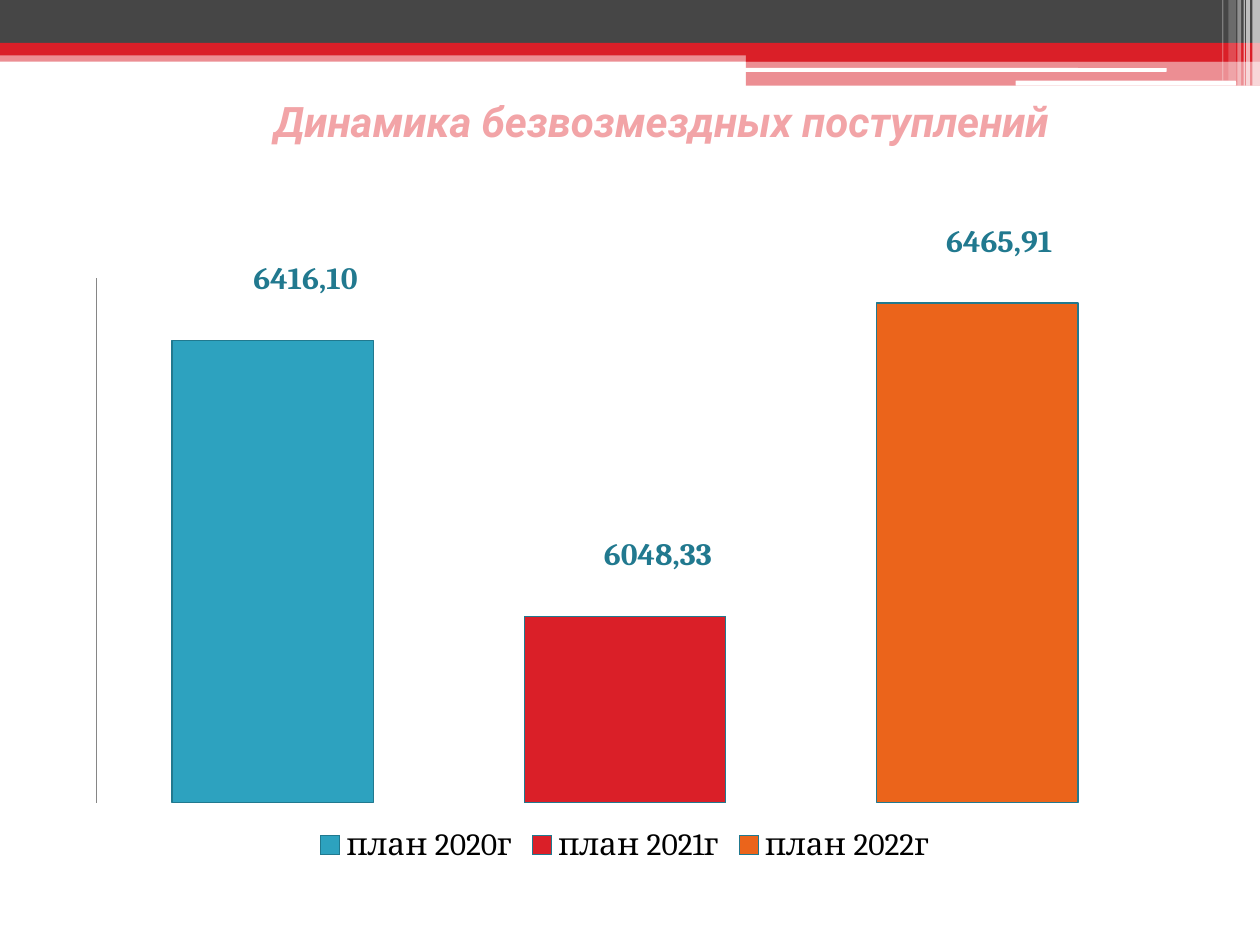
import pptx
import pptx.chart.data
import pptx.dml.color
import pptx.enum.chart
import pptx.enum.shapes
import pptx.enum.text
import pptx.oxml
import pptx.oxml.ns
import pptx.util
from pptx.util import Inches, Pt

RED, DARK, WHITE, TEAL = "DA1F28", "464646", "FFFFFF", "21798F"
RECT = pptx.enum.shapes.MSO_SHAPE.RECTANGLE
ROUND = pptx.enum.shapes.MSO_SHAPE.ROUNDED_RECTANGLE

# left, top, width, height, colour, opacity in percent, preset shape
BANDS = [
    (0, 0.4, 10, 0.09, RED, 50, RECT),
    (0, 0, 10, 0.34, DARK, 100, RECT),
    (0, 0.34, 10, 0.1, RED, 100, RECT),
    (5.92, 0.39, 4.08, 0.1, RED, 100, RECT),
    (5.92, 0.48, 4.08, 0.2, RED, 50, RECT),
    (5.91, 0.54, 3.35, 0.03, WHITE, 100, ROUND),
    (8.06, 0.64, 1.75, 0.04, WHITE, 100, ROUND),
]
# left, width, height, opacity in percent
STRIPES = [
    (9.94, 0.06, 0.68, 65),
    (9.89, 0.03, 0.68, 65),
    (9.87, 0.01, 0.68, 60),
    (9.82, 0.03, 0.68, 40),
    (9.75, 0.06, 0.64, 20),
    (9.7, 0.01, 0.64, 30),
]
# category, value, label, colour, label offset as shares of the chart
PLANS = [
    ("план 2020г", 6416.1, "6416,10", "2DA2BF", 0.03, -0.06),
    ("план 2021г", 6048.33, "6048,33", RED, 0.03, -0.06),
    ("план 2022г", 6465.91, "6465,91", "EB641B", 0.02, -0.06),
]


def rgb(color):
    return pptx.dml.color.RGBColor.from_string(color)


def manual_layout(**values):
    """Return a c:layout element holding the given settings in order."""
    items = "".join(f'<c:{k} val="{v}"/>' for k, v in values.items())
    return pptx.oxml.parse_xml(
        f'<c:layout {pptx.oxml.ns.nsdecls("c")}>'
        f"<c:manualLayout>{items}</c:manualLayout></c:layout>"
    )


class SlideBuilder:
    title_font = "Roboto"
    chart_font = "Cambria"

    def __init__(self, prs):
        self.s = prs.slides.add_slide(prs.slide_layouts[5])

    def band(self, x, y, w, h, color, opacity=100, preset=RECT):
        sp = self.s.shapes.add_shape(preset, Inches(x), Inches(y), Inches(w), Inches(h))
        sp.shadow.inherit = False
        sp.line.fill.background()
        sp.fill.solid()
        sp.fill.fore_color.rgb = rgb(color)
        if opacity < 100:
            clr = sp.fill._xPr.find(".//" + pptx.oxml.ns.qn("a:srgbClr"))
            clr.append(pptx.oxml.parse_xml(
                f'<a:alpha {pptx.oxml.ns.nsdecls("a")} val="{opacity * 1000}"/>'))

    def title(self, text, x, y, w, h):
        sp = self.s.shapes.title
        sp.left, sp.top, sp.width, sp.height = (Inches(v) for v in (x, y, w, h))
        tf = sp.text_frame
        tf.text = text
        tf.margin_left = Inches(0.51)
        tf.vertical_anchor = pptx.enum.text.MSO_ANCHOR.MIDDLE
        p = tf.paragraphs[0]
        p.alignment = pptx.enum.text.PP_ALIGN.CENTER
        p.font.name = self.title_font
        p.font.size = Pt(24)
        p.font.bold = p.font.italic = True
        p.font.color.rgb = rgb("F2A4A7")

    def column_chart(self, plans, x, y, w, h):
        data = pptx.chart.data.CategoryChartData()
        data.categories = [plan[0] for plan in plans]
        data.add_series("Series 1", [plan[1] for plan in plans])
        chart = self.s.shapes.add_chart(
            pptx.enum.chart.XL_CHART_TYPE.COLUMN_CLUSTERED,
            Inches(x), Inches(y), Inches(w), Inches(h), data).chart
        chart.has_title = False
        chart.font.name = self.chart_font
        chart.font.size = Pt(18)
        chart.font.color.rgb = rgb("000000")
        chart.has_legend = True
        chart.legend.position = pptx.enum.chart.XL_LEGEND_POSITION.BOTTOM
        chart.legend.include_in_layout = False
        self.axes(chart)

        plot = chart.plots[0]
        plot.gap_width = 75
        plot.vary_by_categories = True
        series = plot.series[0]
        for i, (_, _, label, color, dx, dy) in enumerate(plans):
            self.column(series.points[i], label, color, dx, dy)
        series.data_labels.show_value = True
        labels = series.data_labels._element
        for leader in labels.findall(pptx.oxml.ns.qn("c:showLeaderLines")):
            leader.set("val", "0")

        area = chart._chartSpace.chart.plotArea
        for old in area.findall(pptx.oxml.ns.qn("c:layout")):
            area.remove(old)
        area.insert(0, manual_layout(
            layoutTarget="inner", xMode="edge", yMode="edge",
            x=0.02, y=0.065, w=0.96, h=0.83))

    def axes(self, chart):
        chart.category_axis.visible = False
        axis = chart.value_axis
        axis.has_major_gridlines = False
        axis.major_tick_mark = pptx.enum.chart.XL_TICK_MARK.NONE
        axis.tick_label_position = pptx.enum.chart.XL_TICK_LABEL_POSITION.NONE
        axis.format.line.color.rgb = rgb("868686")
        axis.format.line.width = Pt(0.75)

    def column(self, point, label, color, dx, dy):
        point.format.fill.solid()
        point.format.fill.fore_color.rgb = rgb(color)
        point.format.line.color.rgb = rgb(TEAL)
        point.format.line.width = Pt(0.75)
        tf = point.data_label.text_frame
        tf.text = label
        font = tf.paragraphs[0].runs[0].font
        font.name = self.chart_font
        font.size = Pt(18)
        font.bold = True
        font.color.rgb = rgb(TEAL)
        point.data_label.position = pptx.enum.chart.XL_LABEL_POSITION.OUTSIDE_END
        point.data_label._dLbl.insert(1, manual_layout(x=dx, y=dy))


def main():
    prs = pptx.Presentation()
    prs.slide_width, prs.slide_height = Inches(10), Inches(7.5)
    slide = SlideBuilder(prs)
    for band in BANDS:
        slide.band(*band)
    for x, w, h, opacity in STRIPES:
        slide.band(x, 0, w, h, WHITE, opacity)
    slide.title("Динамика безвозмездных поступлений", 0.59, 0.6, 8.91, 0.71)
    slide.column_chart(PLANS, 0.59, 1.78, 8.74, 5.12)
    prs.save("out.pptx")


if __name__ == "__main__":
    main()
